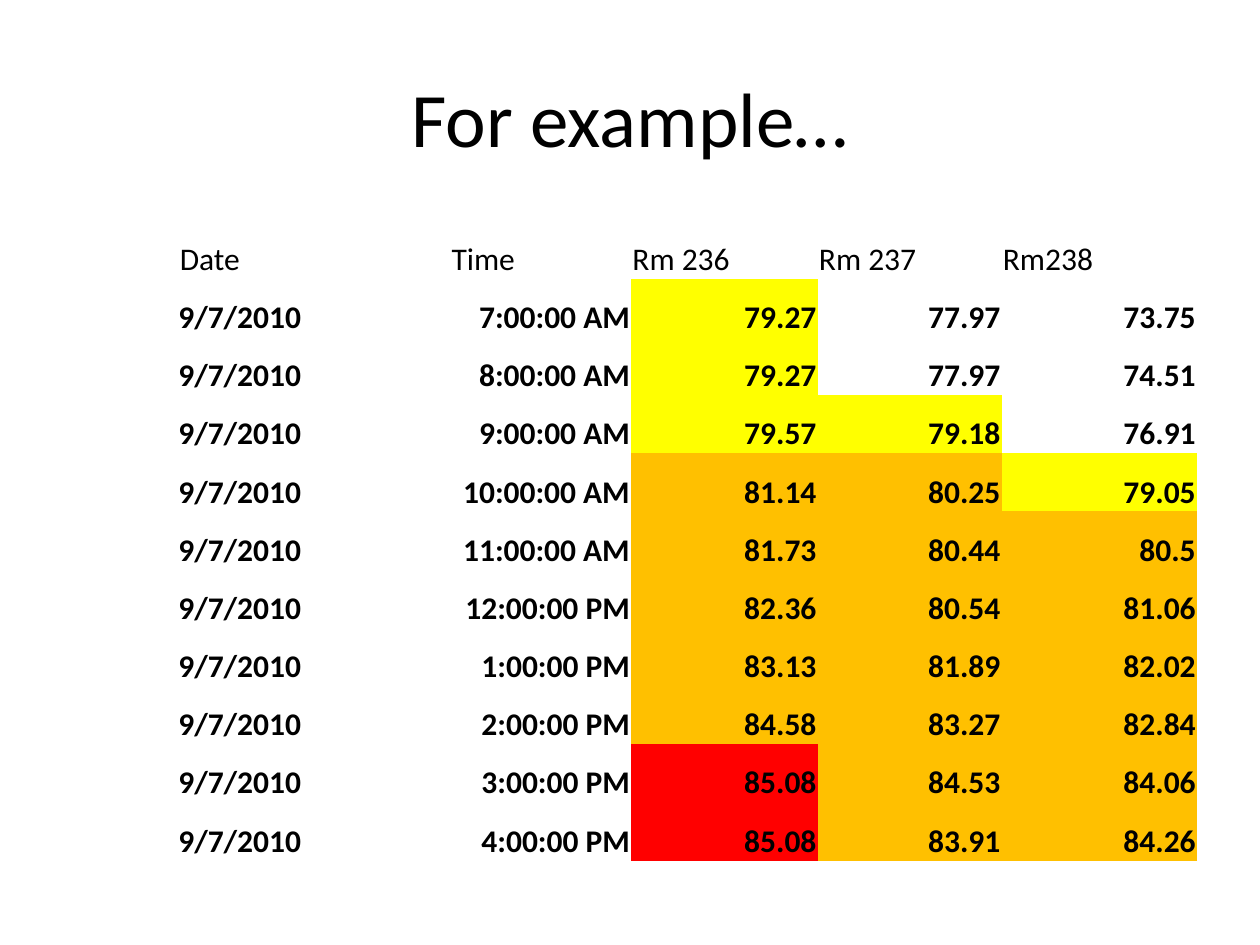
from dataclasses import dataclass
from pptx import Presentation
from pptx.dml.color import RGBColor
from pptx.enum.text import MSO_ANCHOR, PP_ALIGN
from pptx.oxml.ns import qn
from pptx.util import Inches, Pt

TITLE = "For example…"
HEADS = ["Date", "Time", "Rm 236", "Rm 237", "Rm238"]
DATE = "9/7/2010"
TEMPS = [
    ("7:00:00 AM", 79.27, 77.97, 73.75),
    ("8:00:00 AM", 79.27, 77.97, 74.51),
    ("9:00:00 AM", 79.57, 79.18, 76.91),
    ("10:00:00 AM", 81.14, 80.25, 79.05),
    ("11:00:00 AM", 81.73, 80.44, 80.5),
    ("12:00:00 PM", 82.36, 80.54, 81.06),
    ("1:00:00 PM", 83.13, 81.89, 82.02),
    ("2:00:00 PM", 84.58, 83.27, 82.84),
    ("3:00:00 PM", 85.08, 84.53, 84.06),
    ("4:00:00 PM", 85.08, 83.91, 84.26),
]


@dataclass(frozen=True)
class Theme:
    font: str = "Calibri"
    ink: str = "000000"
    title: int = 44
    body: int = 18
    # lowest reading of each heat band, hottest first
    bands: tuple = ((85, "FF0000"), (80, "FFC000"), (79, "FFFF00"))
    plain: str = "{2D5ABB26-0587-4C30-8999-92F81FD0307C}"  # no style, no grid


THEME = Theme()
WIDE, HIGH = 10, 7.5
COLS = [1.73, 2.61, 1.48, 1.46, 1.55]
LEFT, TOP, ROW = 0.67, 1.75, 0.462
PAD, SHIFT = 0.01, 0.27


def write(frame, text, size, align, bold=False):
    para = frame.paragraphs[0]
    para.alignment = align
    run = para.add_run()
    run.text = text
    font = run.font
    font.name, font.size, font.bold = THEME.font, Pt(size), bold
    font.color.rgb = RGBColor.from_string(THEME.ink)


def shade(cell, value):
    """Fill a reading with the colour of its heat band."""
    if isinstance(value, float):
        for low, color in THEME.bands:
            if value >= low:
                cell.fill.solid()
                cell.fill.fore_color.rgb = RGBColor.from_string(color)
                return
    cell.fill.background()


def add_title(slide):
    box = slide.shapes.add_textbox(
        Inches(WIDE * 0.05), Inches(HIGH * 0.04),
        Inches(WIDE * 0.9), Inches(HIGH / 6))
    frame = box.text_frame
    frame.word_wrap = True
    frame.vertical_anchor = MSO_ANCHOR.MIDDLE
    write(frame, TITLE, THEME.title, PP_ALIGN.CENTER)


def add_temps(slide):
    rows = [HEADS] + [(DATE, *line) for line in TEMPS]
    shape = slide.shapes.add_table(
        len(rows), len(COLS), Inches(LEFT), Inches(TOP),
        Inches(sum(COLS)), Inches(ROW * len(rows)))
    next(shape.element.iter(qn("a:tableStyleId"))).text = THEME.plain
    table = shape.table
    table.first_row = table.horz_banding = False
    for col, width in zip(table.columns, COLS):
        col.width = Inches(width)
    for r, line in enumerate(rows):
        table.rows[r].height = Inches(ROW)
        for c, value in enumerate(line):
            cell = table.cell(r, c)
            cell.vertical_anchor = MSO_ANCHOR.BOTTOM
            cell.margin_left = cell.margin_right = cell.margin_top = Inches(PAD)
            cell.margin_bottom = 0
            align = PP_ALIGN.RIGHT
            if r == 0:
                align = PP_ALIGN.CENTER if c < 2 else PP_ALIGN.LEFT
                if c < 2:
                    cell.margin_left = Inches(SHIFT)
            shade(cell, value)
            write(cell.text_frame, str(value), THEME.body, align, r > 0)


def main():
    deck = Presentation()
    deck.slide_width, deck.slide_height = Inches(WIDE), Inches(HIGH)
    slide = deck.slides.add_slide(deck.slide_layouts[6])
    add_title(slide)
    add_temps(slide)
    deck.save("out.pptx")


if __name__ == "__main__":
    main()
